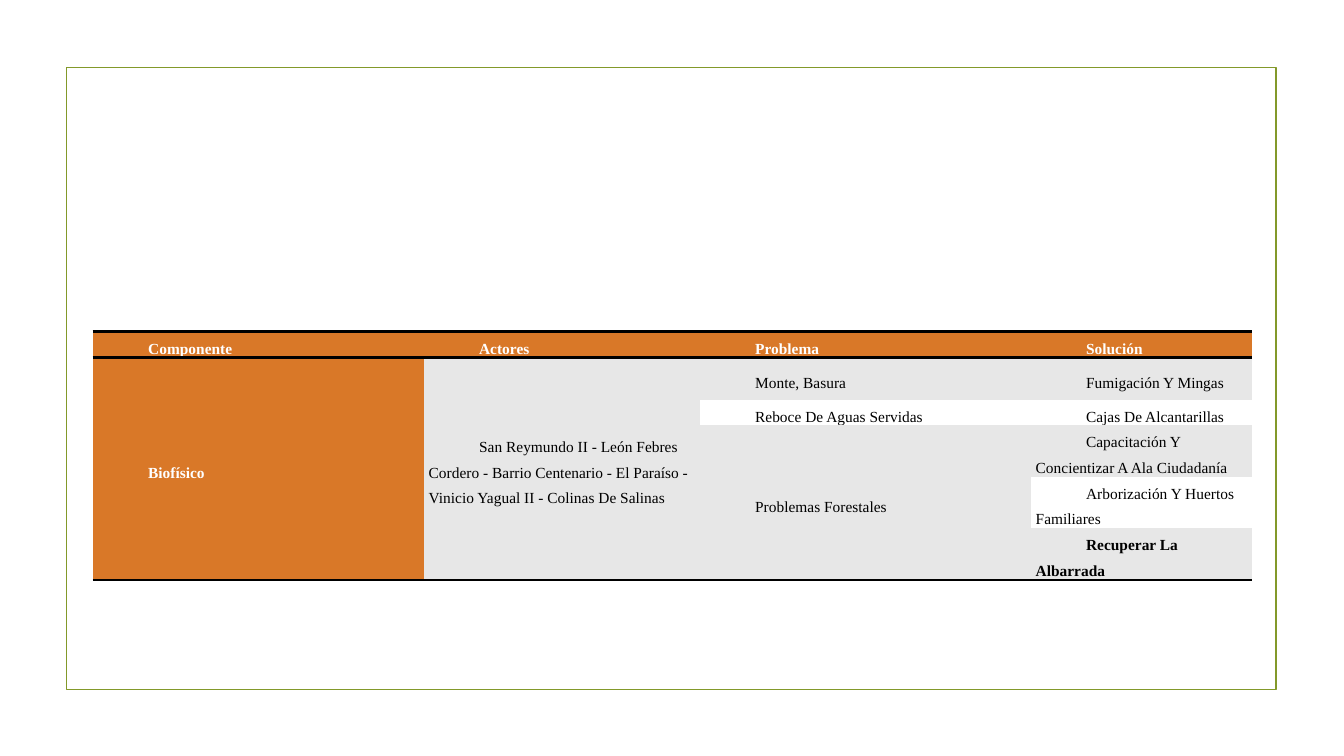
from lxml import etree
from pptx import Presentation
from pptx.dml.color import RGBColor
from pptx.enum.shapes import MSO_SHAPE
from pptx.enum.text import MSO_ANCHOR
from pptx.oxml.ns import qn
from pptx.util import Pt

RECTANGLE = MSO_SHAPE.RECTANGLE
MIDDLE = MSO_ANCHOR.MIDDLE

HEADERS = ["Componente", "Actores", "Problema", "Solución"]
COMPONENT = "Biofísico"
ACTORS = (
    "San Reymundo II - León Febres Cordero - Barrio Centenario - "
    "El Paraíso - Vinicio Yagual II - Colinas De Salinas"
)
PROBLEMS = [
    ("Monte, Basura", ["Fumigación Y Mingas"]),
    ("Reboce De Aguas Servidas", ["Cajas De Alcantarillas"]),
    ("Problemas Forestales", [
        "Capacitación Y Concientizar A Ala Ciudadanía",
        "Arborización Y Huertos Familiares",
        "Recuperar La Albarrada",
    ]),
]

THEME = {
    "font": "Times New Roman",
    "size": 11,
    "frame": "83992A",
    "accent": "D97828",
    "bands": ["E7E7E7", "FFFFFF"],
    "light": "FFFFFF",
    "dark": "000000",
}
PAGE_SIZE = (960, 540)
FRAME = (47.5, 48.25, 864, 444.25)
TABLE_AT = (66.25, 236.9)
COLUMN_WIDTHS = [236.4, 197.2, 236.4, 158]
ROW_HEIGHTS = [15.1, 30.2, 15.1, 30.2, 30.2, 15.1]
INDENT = 36
RULE_WIDTH = 2


def color(name):
    return RGBColor.from_string(name)


def add_rule(cell, side):
    line = etree.SubElement(cell._tc.get_or_add_tcPr(), qn(f"a:ln{side}"), w=str(Pt(RULE_WIDTH)))
    fill = etree.SubElement(line, qn("a:solidFill"))
    etree.SubElement(fill, qn("a:srgbClr"), val=THEME["dark"])


def fill_cell(table, row, column, text, fill, ink, bold=False, span=1):
    cell = table.cell(row, column)
    last = row + span - 1
    if span > 1:
        cell.merge(table.cell(last, column))
    if row == 0:
        add_rule(cell, "T")
    if last in (0, len(ROW_HEIGHTS) - 1):
        add_rule(cell, "B")
        if span > 1:
            add_rule(table.cell(last, column), "B")
    cell.fill.solid()
    cell.fill.fore_color.rgb = color(fill)
    cell.vertical_anchor = MIDDLE
    cell.margin_left = cell.margin_right = Pt(3.6)
    cell.margin_top = cell.margin_bottom = 0
    para = cell.text_frame.paragraphs[0]
    properties = para._p.get_or_add_pPr()
    properties.set("marL", "0")
    properties.set("indent", str(Pt(INDENT)))
    para.line_spacing = 1.5
    span_run = para.add_run()
    span_run.text = text
    span_run.font.name = THEME["font"]
    span_run.font.size = Pt(THEME["size"])
    span_run.font.bold = bold
    span_run.font.color.rgb = color(ink)


def add_frame(page):
    box = page.shapes.add_shape(RECTANGLE, *map(Pt, FRAME))
    box.shadow.inherit = False
    box.fill.background()
    box.line.color.rgb = color(THEME["frame"])
    box.line.width = Pt(1.25)


def add_problem_table(page):
    size = (sum(COLUMN_WIDTHS), sum(ROW_HEIGHTS))
    holder = page.shapes.add_table(
        len(ROW_HEIGHTS), len(COLUMN_WIDTHS), *map(Pt, TABLE_AT + size)
    )
    table = holder.table
    table.first_row = table.horz_banding = False
    style = table._tbl.tblPr.find(qn("a:tableStyleId"))
    style.text = "{2D5ABB26-0587-4C30-8999-92F81FD0307C}"
    for column, width in zip(table.columns, COLUMN_WIDTHS):
        column.width = Pt(width)
    for row, height in zip(table.rows, ROW_HEIGHTS):
        row.height = Pt(height)

    accent, light, dark = THEME["accent"], THEME["light"], THEME["dark"]
    for column, header in enumerate(HEADERS):
        fill_cell(table, 0, column, header, accent, light, bold=True)
    body = len(ROW_HEIGHTS) - 1
    fill_cell(table, 1, 0, COMPONENT, accent, light, bold=True, span=body)
    fill_cell(table, 1, 1, ACTORS, THEME["bands"][0], dark, span=body)
    row = 1
    for problem, solutions in PROBLEMS:
        band = THEME["bands"][(row - 1) % 2]
        fill_cell(table, row, 2, problem, band, dark, span=len(solutions))
        for solution in solutions:
            band = THEME["bands"][(row - 1) % 2]
            fill_cell(table, row, 3, solution, band, dark, bold=row == body)
            row += 1


def main():
    deck = Presentation()
    deck.slide_width, deck.slide_height = map(Pt, PAGE_SIZE)
    page = deck.slides.add_slide(deck.slide_layouts[6])
    add_frame(page)
    add_problem_table(page)
    deck.save("out.pptx")


if __name__ == "__main__":
    main()
